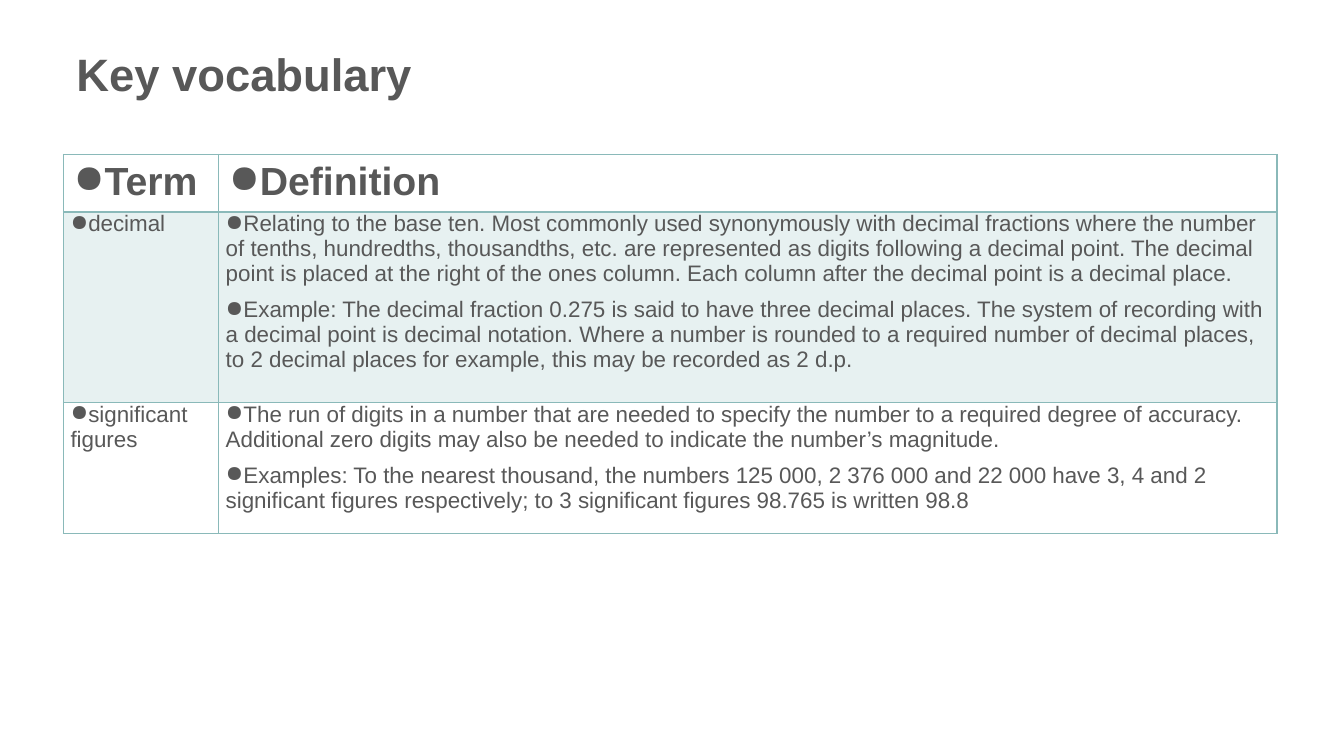
from dataclasses import dataclass

from lxml import etree
from pptx import Presentation
from pptx import util as u
from pptx.dml import color as dml
from pptx.enum import text
from pptx.oxml import ns

Pt = u.Pt
HUE = {"ink": "585858", "teal": "8AB9B9"}
FONT = "Arial"


@dataclass
class Row:
    height: float
    term: list[str]
    meaning: list[str]
    size: float = 16
    bold: bool = False
    pad: tuple[float, float] = (5.04, 0)
    under: float = 1
    over: float = 1
    tint: bool = False


ROWS = [
    Row(32.4, ["Term"], ["Definition"], size=28, bold=True, pad=(7.2, 3.6), under=2),
    Row(136.08, ["decimal"], [
        "Relating to the base ten. Most commonly used synonymously with decimal "
        "fractions where the number of tenths, hundredths, thousandths, etc. are "
        "represented as digits following a decimal point. The decimal point is placed "
        "at the right of the ones column. Each column after the decimal point is a "
        "decimal place.",
        "Example: The decimal fraction 0.275 is said to have three decimal places. The "
        "system of recording with a decimal point is decimal notation. Where a number "
        "is rounded to a required number of decimal places, to 2 decimal places for "
        "example, this may be recorded as 2 d.p.",
    ], over=2, tint=True),
    Row(93.6, ["significant figures"], [
        "The run of digits in a number that are needed to specify the number to a "
        "required degree of accuracy. Additional zero digits may also be needed to "
        "indicate the number’s magnitude.",
        "Examples: To the nearest thousand, the numbers 125 000, 2 376 000 and 22 000 "
        "have 3, 4 and 2 significant figures respectively; to 3 significant figures "
        "98.765 is written 98.8",
    ]),
]
COLS = [110.88, 756]


def style(para, size: float, bold: bool) -> None:
    font = para.font
    font.name, font.size, font.bold = FONT, Pt(size), bold
    font.color.rgb = dml.RGBColor.from_string(HUE["ink"])


def bullet(para) -> None:
    props = para._p.get_or_add_pPr()
    props.set("marL", "0")
    props.set("indent", "0")
    etree.SubElement(props, ns.qn("a:buChar"), char="●")


def edge(cell, row: Row) -> None:
    props = cell._tc.get_or_add_tcPr()
    sides = {"lnL": 1, "lnR": 1, "lnT": row.over, "lnB": row.under}
    for spot, (side, width) in enumerate(sides.items()):
        line = etree.Element(ns.qn(f"a:{side}"), w=str(Pt(width)))
        fill = etree.SubElement(line, ns.qn("a:solidFill"))
        etree.SubElement(fill, ns.qn("a:srgbClr"), val=HUE["teal"])
        props.insert(spot, line)


def shade(cell, tint: bool) -> None:
    if not tint:
        cell.fill.background()
        return
    cell.fill.solid()
    cell.fill.fore_color.rgb = dml.RGBColor.from_string(HUE["teal"])
    tone = cell._tc.tcPr.find(".//" + ns.qn("a:srgbClr"))
    etree.SubElement(tone, ns.qn("a:alpha"), val="20000")


def write(cell, row: Row, lines: list[str]) -> None:
    side, top = row.pad
    cell.margin_left = cell.margin_right = Pt(side)
    cell.margin_top = cell.margin_bottom = Pt(top)
    shade(cell, row.tint)
    edge(cell, row)
    frame = cell.text_frame
    for spot, line in enumerate(lines):
        para = frame.add_paragraph() if spot else frame.paragraphs[0]
        para.text = line
        if spot:
            para.space_before = Pt(4)
        if not row.bold:
            para.space_after = Pt(4)
        bullet(para)
        style(para, row.size, row.bold)


def main() -> None:
    deck = Presentation()
    deck.slide_width, deck.slide_height = Pt(960), Pt(540)
    slide = deck.slides.add_slide(deck.slide_layouts[6])

    # Title
    box = slide.shapes.add_textbox(Pt(47.52), Pt(33.84), Pt(864), Pt(77.04))
    frame = box.text_frame
    frame.word_wrap = True
    frame.vertical_anchor = text.MSO_ANCHOR.TOP
    head = frame.paragraphs[0]
    head.text = "Key vocabulary"
    head.line_spacing = 0.9
    style(head, 32.4, True)

    # Vocabulary table
    grid = slide.shapes.add_table(
        len(ROWS), len(COLS), Pt(45.36), Pt(110.4),
        Pt(sum(COLS)), Pt(sum(row.height for row in ROWS))).table
    grid.first_row = grid.horz_banding = False
    for col, width in zip(grid.columns, COLS):
        col.width = Pt(width)
    for spot, row in enumerate(ROWS):
        grid.rows[spot].height = Pt(row.height)
        write(grid.cell(spot, 0), row, row.term)
        write(grid.cell(spot, 1), row, row.meaning)

    deck.save("out.pptx")


if __name__ == "__main__":
    main()
